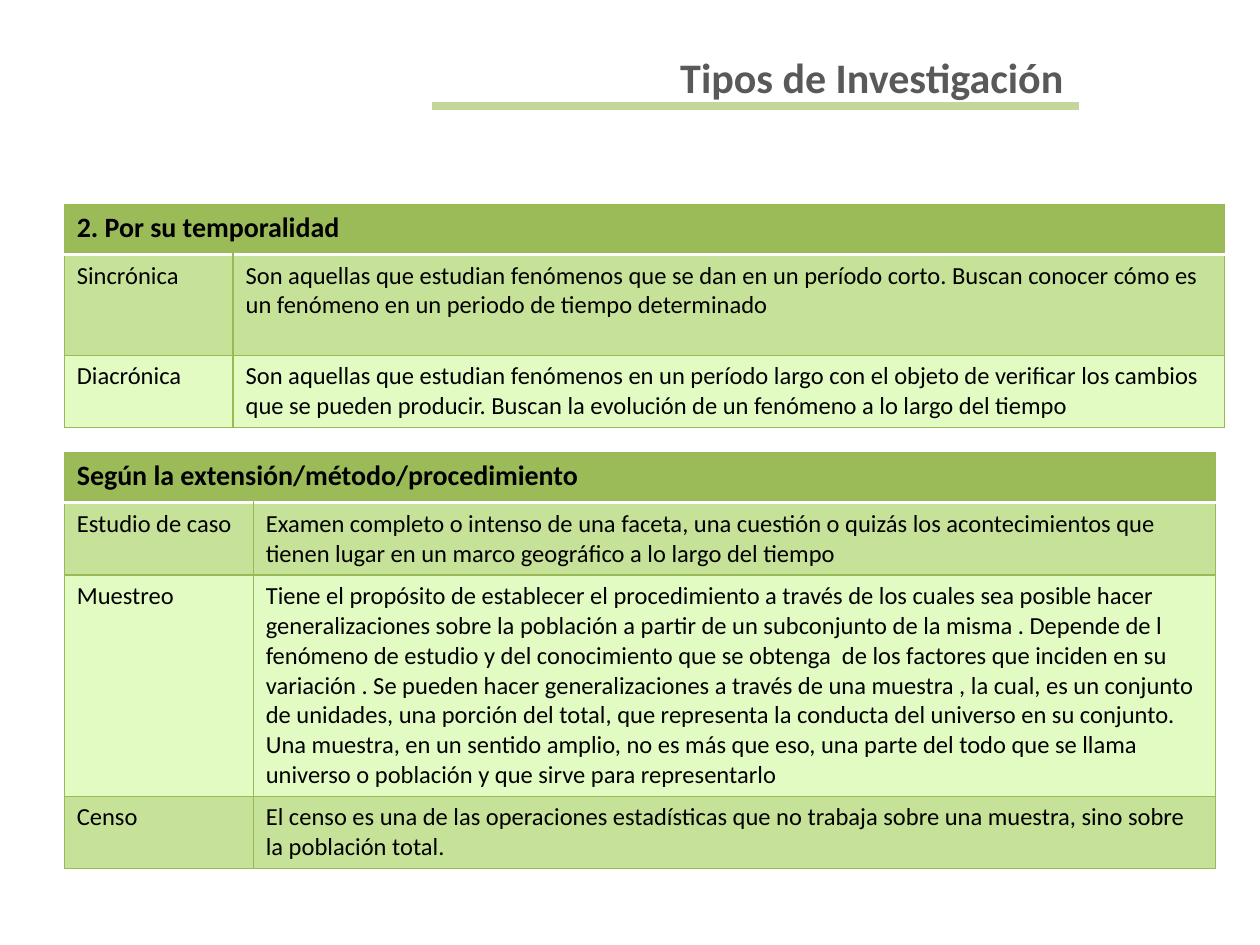
from dataclasses import dataclass

from lxml import etree
from pptx import Presentation
from pptx.dml.color import RGBColor
from pptx.enum.shapes import MSO_CONNECTOR
from pptx.enum.text import MSO_ANCHOR, MSO_AUTO_SIZE, PP_ALIGN
from pptx.oxml.ns import qn
from pptx.util import Inches, Pt

STRAIGHT = MSO_CONNECTOR.STRAIGHT
TOP = MSO_ANCHOR.TOP
RIGHT = PP_ALIGN.RIGHT
NO_FIT = MSO_AUTO_SIZE.NONE


@dataclass(frozen=True)
class Theme:
    font: str = "Calibri"
    title: str = "595959"
    rule: str = "C3D69B"
    text: str = "000000"
    header: str = "9BBB59"
    dark: str = "C6E198"
    light: str = "E2FBC2"
    border: str = "98B955"
    divider: str = "FFFFFF"
    title_size: int = 24
    header_size: int = 16
    body_size: int = 14


theme = Theme()


def add_run(p, text, size, color, bold):
    r = p.add_run()
    r.text = text
    r.font.name = theme.font
    r.font.size = Pt(size)
    r.font.bold = bold
    r.font.color.rgb = RGBColor.from_string(color)


def set_border(cell, side, color, width):
    ln = etree.SubElement(cell._tc.get_or_add_tcPr(), qn("a:ln" + side), w=str(Pt(width)))
    fill = etree.SubElement(ln, qn("a:solidFill"))
    etree.SubElement(fill, qn("a:srgbClr"), val=color)


tables = [
    (1.62, [1.34, 7.87], [0.4, 0.8, 0.57], [
        ("2. Por su temporalidad", ""),
        ("Sincrónica",
         "Son aquellas que estudian fenómenos que se dan en un período corto. "
         "Buscan conocer cómo es un fenómeno en un periodo de tiempo determinado"),
        ("Diacrónica",
         "Son aquellas que estudian fenómenos en un período largo con el objeto de "
         "verificar los cambios que se pueden producir. Buscan la evolución de un "
         "fenómeno a lo largo del tiempo"),
    ]),
    (3.59, [1.5, 7.64], [0.4, 0.57, 1.73, 0.57], [
        ("Según la extensión/método/procedimiento", ""),
        ("Estudio de caso",
         "Examen completo o intenso de una faceta, una cuestión o quizás los "
         "acontecimientos que tienen lugar en un marco geográfico a lo largo del tiempo"),
        ("Muestreo",
         "Tiene el propósito de establecer el procedimiento a través de los cuales sea "
         "posible hacer generalizaciones sobre la población a partir de un subconjunto "
         "de la misma . Depende de l fenómeno de estudio y del conocimiento que se "
         "obtenga  de los factores que inciden en su variación . Se pueden hacer "
         "generalizaciones a través de una muestra , la cual, es un conjunto de "
         "unidades, una porción del total, que representa la conducta del universo en "
         "su conjunto. Una muestra, en un sentido amplio, no es más que eso, una parte "
         "del todo que se llama universo o población y que sirve para representarlo"),
        ("Censo",
         "El censo es una de las operaciones estadísticas que no trabaja sobre una "
         "muestra, sino sobre la población total."),
    ]),
]

prs = Presentation()
prs.slide_width, prs.slide_height = Inches(10), Inches(7.5)
s = prs.slides.add_slide(prs.slide_layouts[5])

title = s.shapes.title
title.left, title.top = Inches(3.66), Inches(0.36)
title.width, title.height = Inches(4.96), Inches(0.5)
tf = title.text_frame
tf.word_wrap = True
tf.auto_size = NO_FIT
tf.vertical_anchor = TOP
tf.margin_right = Inches(0.18)
p = tf.paragraphs[0]
p.alignment = RIGHT
add_run(p, "Tipos de Investigación", theme.title_size, theme.title, True)

rule = s.shapes.add_connector(STRAIGHT, Inches(3.43), Inches(0.84), Inches(8.56), Inches(0.84))
rule.line.color.rgb = RGBColor.from_string(theme.rule)
rule.line.width = Pt(4.5)
etree.SubElement(rule._element.spPr, qn("a:effectLst"))

for top, widths, heights, rows in tables:
    frame = s.shapes.add_table(len(rows), len(widths), Inches(0.51), Inches(top),
                               Inches(sum(widths)), Inches(sum(heights)))
    table = frame.table
    for col, width in zip(table.columns, widths):
        col.width = Inches(width)
    for row, height in zip(table.rows, heights):
        row.height = Inches(height)
    table.cell(0, 0).merge(table.cell(0, 1))
    for i, texts in enumerate(rows):
        is_header = i == 0
        size = theme.header_size if is_header else theme.body_size
        fill = theme.header if is_header else theme.dark if i % 2 else theme.light
        for j, text in enumerate(texts):
            cell = table.cell(i, j)
            for side in "LRTB":
                if (i, side) in ((0, "B"), (1, "T")):
                    set_border(cell, side, theme.divider, 2)
                else:
                    set_border(cell, side, theme.border, 0.75)
            cell.fill.solid()
            cell.fill.fore_color.rgb = RGBColor.from_string(fill)
            if text:
                add_run(cell.text_frame.paragraphs[0], text, size, theme.text, is_header)

prs.save("out.pptx")
